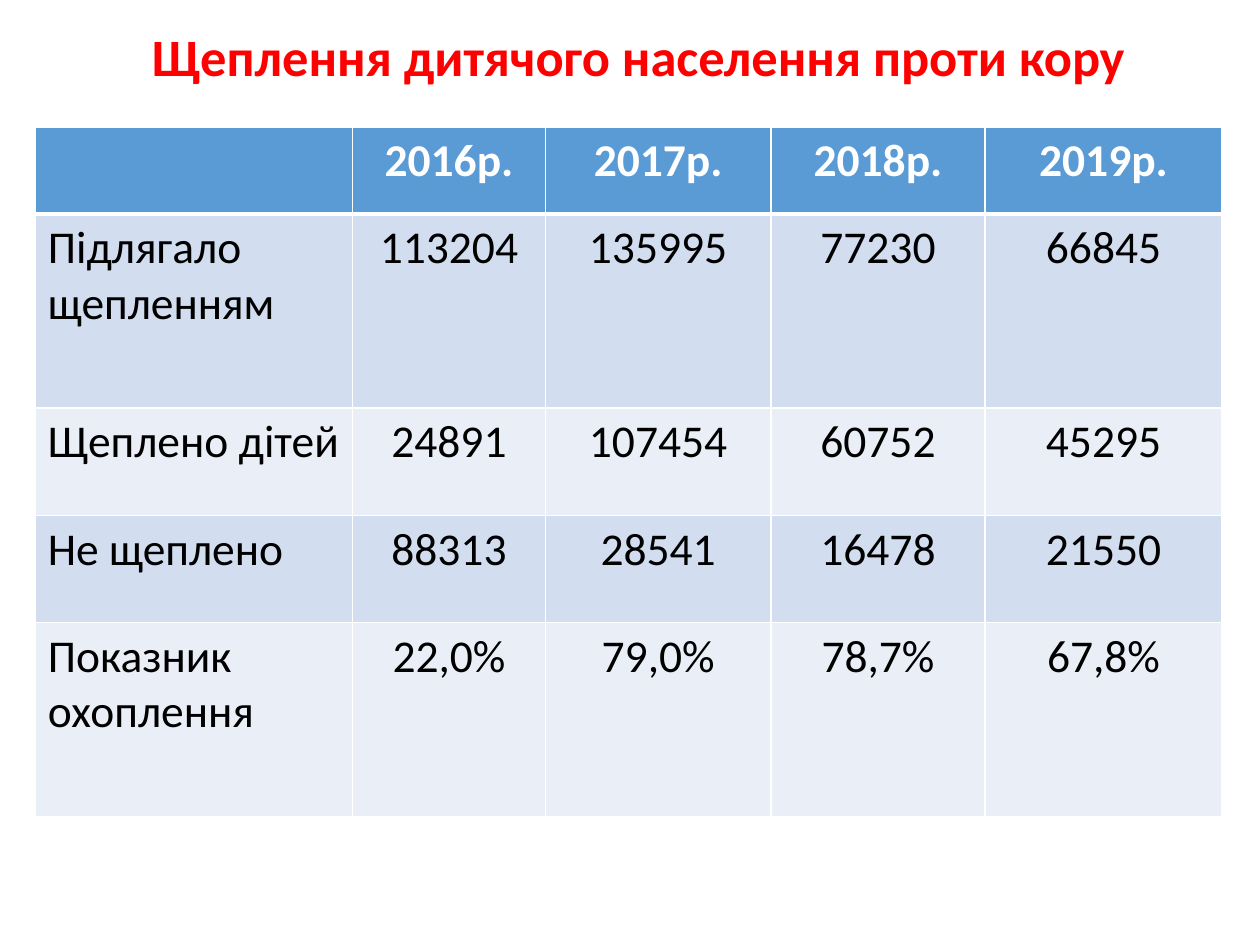
from lxml import etree
from pptx import Presentation
from pptx.dml.color import RGBColor
from pptx.enum.text import MSO_ANCHOR as Anchor, PP_ALIGN as Align
from pptx.oxml.ns import qn
from pptx.util import Inches, Pt

RED = RGBColor(0xFF, 0x00, 0x00)
WHITE = RGBColor(0xFF, 0xFF, 0xFF)
BLACK = RGBColor(0x00, 0x00, 0x00)
HEADER_BLUE = RGBColor(0x5B, 0x9B, 0xD5)
BAND_FILLS = (RGBColor(0xD2, 0xDE, 0xEF), RGBColor(0xEA, 0xEF, 0xF7))

TITLE = "Щеплення дитячого населення проти кору"
COLUMN_WIDTHS = (2.52, 1.53, 1.79, 1.7, 1.88)
ROW_HEIGHTS = (0.69, 1.54, 0.85, 0.85, 1.54)
VACCINATION_ROWS = (
    ("", "2016р.", "2017р.", "2018р.", "2019р."),
    ("Підлягало щепленням", "113204", "135995", "77230", "66845"),
    ("Щеплено дітей", "24891", "107454", "60752", "45295"),
    ("Не щеплено", "88313", "28541", "16478", "21550"),
    ("Показник охоплення", "22,0%", "79,0%", "78,7%", "67,8%"),
)


def write_text(frame, text, size=26, color=BLACK, bold=False,
               align=Align.LEFT, line_spacing=None):
    paragraph = frame.paragraphs[0]
    paragraph.text = text
    paragraph.alignment = align
    paragraph.line_spacing = line_spacing
    font = paragraph.font
    font.name = "Calibri"
    font.size = Pt(size)
    font.bold = bold
    font.color.rgb = color


def set_borders(cell, color, **widths):
    """Draw cell edges; widths maps L, R, T and B to points."""
    properties = cell._tc.get_or_add_tcPr()
    for position, (edge, width) in enumerate(widths.items()):
        line = etree.Element(qn(f"a:ln{edge}"), w=str(Pt(width)))
        fill = etree.SubElement(line, qn("a:solidFill"))
        etree.SubElement(fill, qn("a:srgbClr"), val=str(color))
        properties.insert(position, line)


class SlideBuilder:
    def __init__(self, presentation):
        self.slide = presentation.slides.add_slide(presentation.slide_layouts[5])

    def add_title(self, text, left, top, width, height):
        title = self.slide.shapes.title
        title.left, title.top = Inches(left), Inches(top)
        title.width, title.height = Inches(width), Inches(height)
        title.text_frame.vertical_anchor = Anchor.MIDDLE
        write_text(title.text_frame, text, size=30, color=RED, bold=True,
                   align=Align.CENTER, line_spacing=0.9)

    def add_table(self, rows, left, top, widths, heights):
        table = self.slide.shapes.add_table(
            len(rows), len(widths), Inches(left), Inches(top),
            Inches(sum(widths)), Inches(sum(heights))).table
        for column, width in zip(table.columns, widths):
            column.width = Inches(width)
        for row, height in zip(table.rows, heights):
            row.height = Inches(height)
        for row_index, values in enumerate(rows):
            for column_index, value in enumerate(values):
                self.fill_cell(table.cell(row_index, column_index), value,
                               row_index, column_index)

    def fill_cell(self, cell, value, row_index, column_index):
        is_header = row_index == 0
        cell.fill.solid()
        cell.fill.fore_color.rgb = (
            HEADER_BLUE if is_header else BAND_FILLS[(row_index - 1) % 2])
        set_borders(cell, WHITE, L=1, R=1, T=3 if row_index == 1 else 1,
                    B=3 if is_header else 1)
        write_text(cell.text_frame, value, bold=is_header,
                   color=WHITE if is_header else BLACK,
                   align=Align.CENTER if column_index else Align.LEFT)


def main():
    presentation = Presentation()
    presentation.slide_width = Inches(10)
    presentation.slide_height = Inches(7.5)
    builder = SlideBuilder(presentation)
    builder.add_title(TITLE, 0.76, 0.1, 8.62, 0.75)
    builder.add_table(VACCINATION_ROWS, 0.28, 1.01, COLUMN_WIDTHS, ROW_HEIGHTS)
    presentation.save("out.pptx")


if __name__ == "__main__":
    main()
